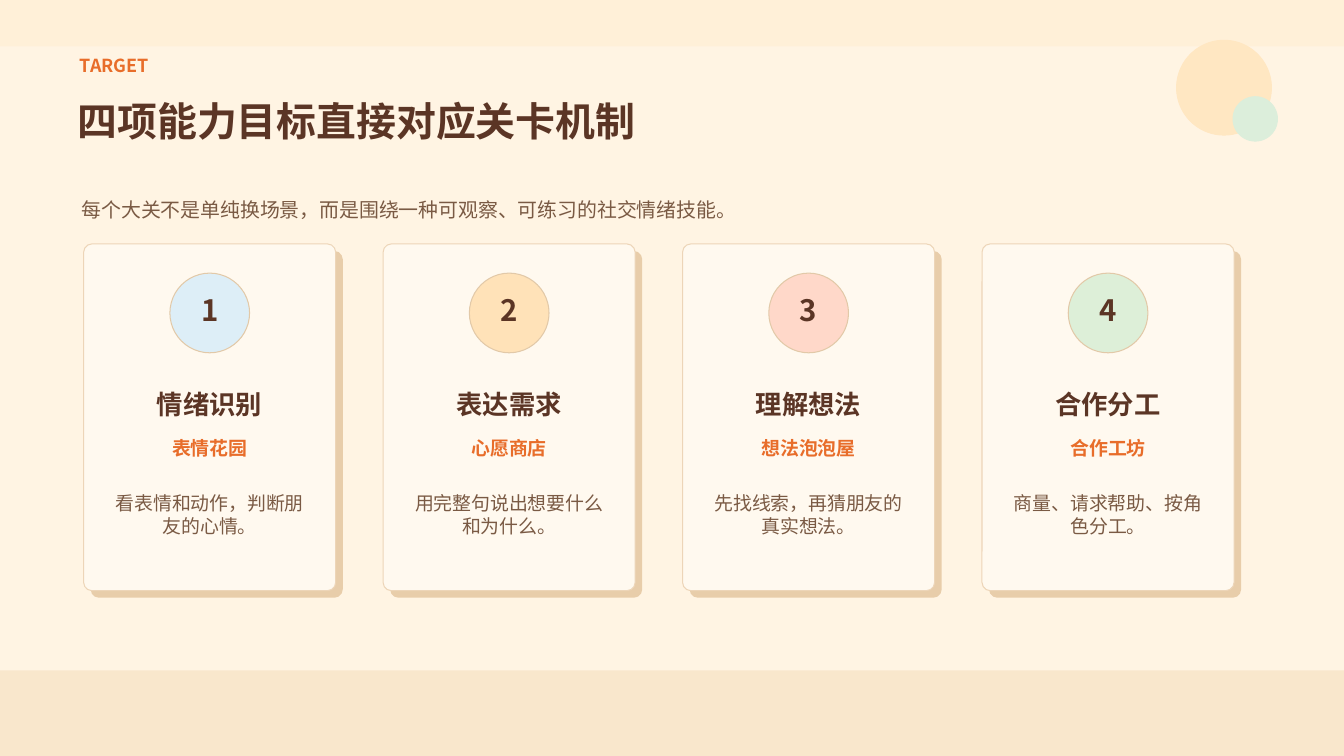
from lxml import etree
from pptx import Presentation
from pptx.dml.color import RGBColor
from pptx.enum.shapes import MSO_SHAPE
from pptx.enum.text import PP_ALIGN
from pptx.oxml.ns import qn
from pptx.util import Inches, Pt

RECT, OVAL, ROUND = MSO_SHAPE.RECTANGLE, MSO_SHAPE.OVAL, MSO_SHAPE.ROUNDED_RECTANGLE
LEFT, CENTER = PP_ALIGN.LEFT, PP_ALIGN.CENTER
FACE = "Noto Sans CJK SC"
WIDTH, HEIGHT = 13.33, 7.5

COLORS = {
    "page": "FFF4E3", "top": "FFF0D8", "floor": "F9E7CC",
    "sun": "FFE7C2", "mint": "DCEEDB",
    "orange": "E86D2A", "dark": "5B3525", "brown": "7A5A44",
    "shade": "E8CDAA", "card": "FFF9EF", "edge": "EDD5B8", "ring": "E2C9A8",
    "blue": "DDEEF7", "gold": "FFE2B8", "pink": "FFD8C9", "green": "DDEFD8",
}

# Text formats
STYLES = {
    "label": {"size": Pt(12.8), "bold": True, "color": "orange"},
    "title": {"size": Pt(28.5), "bold": True, "color": "dark"},
    "lead": {"size": Pt(14.2), "bold": False, "color": "brown"},
    "number": {"size": Pt(21), "bold": True, "color": "dark"},
    "skill": {"size": Pt(18.8), "bold": True, "color": "dark"},
    "level": {"size": Pt(13.5), "bold": True, "color": "orange"},
    "body": {"size": Pt(13.5), "bold": False, "color": "brown"},
}

# Card grid
CARD_X, CARD_Y, CARD_W, CARD_H = 0.83, 2.42, 2.5, 3.44
STEP, OFFSET, DISC = 2.97, 0.07, 0.79
CARDS = [
    ("blue", "情绪识别", "表情花园", "看表情和动作，判断朋友的心情。"),
    ("gold", "表达需求", "心愿商店", "用完整句说出想要什么和为什么。"),
    ("pink", "理解想法", "想法泡泡屋", "先找线索，再猜朋友的真实想法。"),
    ("green", "合作分工", "合作工坊", "商量、请求帮助、按角色分工。"),
]


def rgb(name):
    return RGBColor.from_string(COLORS[name])


def add_form(slide, kind, box, fill, line=None):
    form = slide.shapes.add_shape(kind, *map(Inches, box))
    form.shadow.inherit = False
    form.fill.solid()
    form.fill.fore_color.rgb = rgb(fill)
    if line:
        form.line.color.rgb = rgb(line)
        form.line.width = Pt(0.75)
    else:
        form.line.fill.background()
    if kind == ROUND:
        form.adjustments[0] = 0.033
    return form


def add_text(slide, box, text, style, align=LEFT):
    frame = slide.shapes.add_textbox(*map(Inches, box)).text_frame
    frame.word_wrap = True
    for side in ("left", "top", "right", "bottom"):
        setattr(frame, f"margin_{side}", 0)
    para = frame.paragraphs[0]
    para.alignment = align
    run = para.add_run()
    run.text = text
    font = run.font
    font.name = FACE
    for key, value in STYLES[style].items():
        if key == "color":
            font.color.rgb = rgb(value)
        else:
            setattr(font, key, value)
    # East Asian typeface
    props = run._r.get_or_add_rPr()
    etree.SubElement(props, qn("a:ea"), typeface=FACE)


def add_card(slide, index, tint, skill, level, body):
    left = CARD_X + index * STEP
    mid = left + CARD_W / 2
    add_form(slide, ROUND, (left + OFFSET, CARD_Y + OFFSET, CARD_W, CARD_H), "shade")
    add_form(slide, ROUND, (left, CARD_Y, CARD_W, CARD_H), "card", "edge")
    add_form(slide, OVAL, (mid - DISC / 2, 2.71, DISC, DISC), tint, "ring")
    rows = [
        (str(index + 1), "number", 2.9, DISC, 0.35),
        (skill, "skill", 3.85, 1.92, 0.35),
        (level, "level", 4.33, 1.92, 0.29),
        (body, "body", 4.88, 1.88, 0.85),
    ]
    for text, style, top, width, height in rows:
        add_text(slide, (mid - width / 2, top, width, height), text, style, CENTER)


def main():
    deck = Presentation()
    deck.slide_width, deck.slide_height = Inches(WIDTH), Inches(HEIGHT)
    slide = deck.slides.add_slide(deck.slide_layouts[6])

    # Backdrop
    add_form(slide, RECT, (0, 0, WIDTH, HEIGHT), "page")
    add_form(slide, RECT, (0, 0, WIDTH, 0.46), "top")
    add_form(slide, RECT, (0, 6.65, WIDTH, 0.85), "floor")
    add_form(slide, OVAL, (11.67, 0.4, 0.94, 0.94), "sun", "sun")
    add_form(slide, OVAL, (12.23, 0.96, 0.44, 0.44), "mint", "mint")

    # Heading
    add_text(slide, (0.79, 0.54, 6.56, 0.29), "TARGET", "label")
    add_text(slide, (0.77, 0.96, 8.85, 0.94), "四项能力目标直接对应关卡机制", "title")
    add_text(slide, (0.81, 1.96, 7.92, 0.48),
             "每个大关不是单纯换场景，而是围绕一种可观察、可练习的社交情绪技能。", "lead")

    # Skill cards
    for index, card in enumerate(CARDS):
        add_card(slide, index, *card)

    deck.save("out.pptx")


if __name__ == "__main__":
    main()
